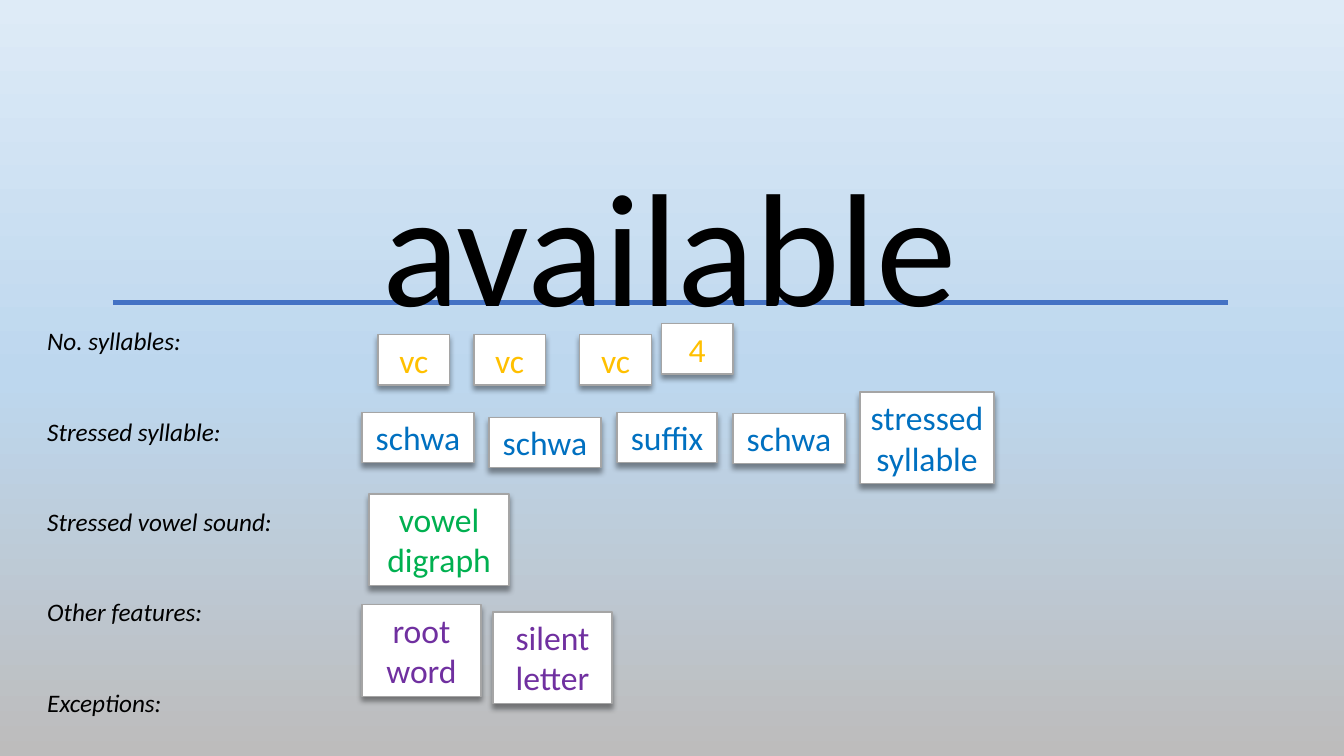
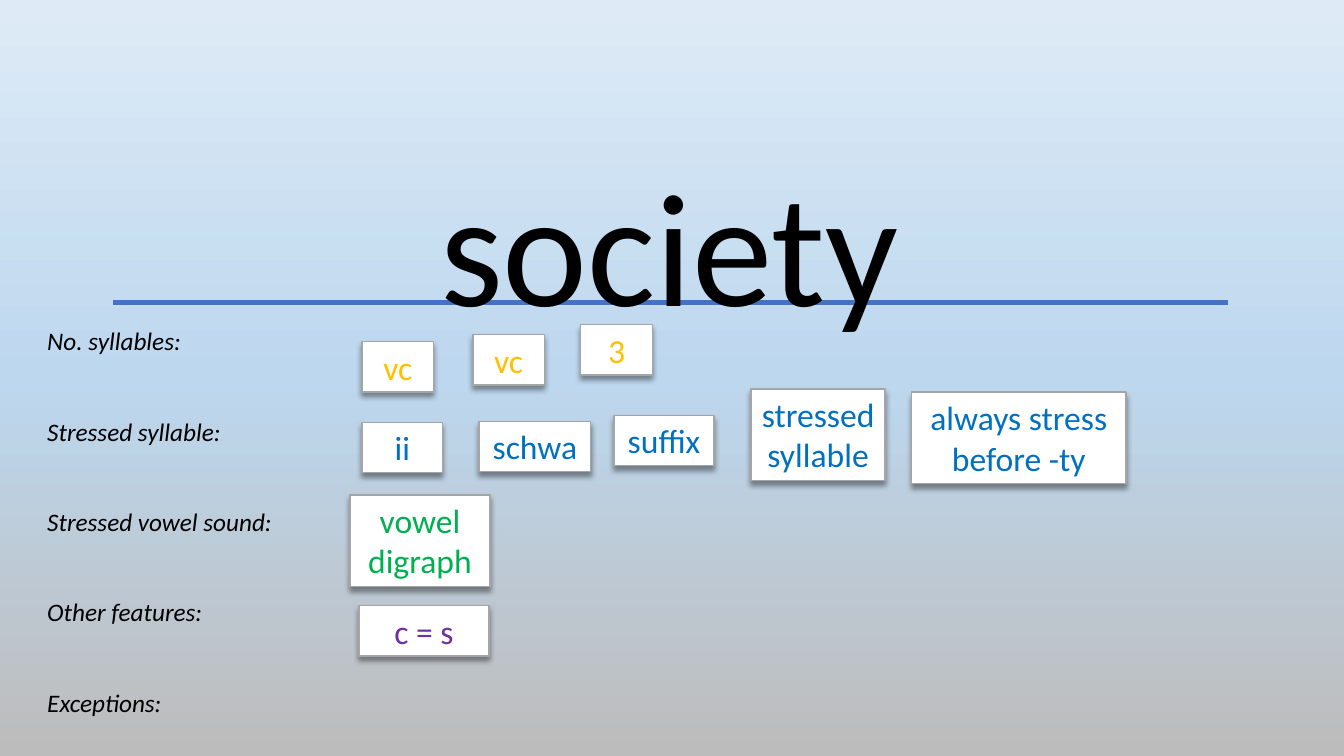
import copy

import pptx
import pptx.dml.color
import pptx.enum.shapes
import pptx.enum.text
import pptx.oxml
import pptx.oxml.ns
import pptx.util

Inches = pptx.util.Inches
Pt = pptx.util.Pt
qn = pptx.oxml.ns.qn
ALIGN = pptx.enum.text.PP_ALIGN
ANCHOR = pptx.enum.text.MSO_ANCHOR
AUTO_SIZE = pptx.enum.text.MSO_AUTO_SIZE

FONT = "Calibri"
BLACK, WHITE = "000000", "FFFFFF"
GREY, BLUE = "A5A5A5", "4472C4"
BACKGROUND = [(0, "DEEBF7"), (0.5, "BDD7EE"), (1, "BDBCBC")]
COUNT, STRESS, VOWEL, FEATURE = "FFC000", "0070C0", "00B050", "7030A0"
LABELS = ["No. syllables:", "Stressed syllable:", "Stressed vowel sound:",
          "Other features:", "Exceptions:"]

LOW, TALL = 0.5, 0.91
CARD_SIZES = {
    "vc": (0.71, LOW), "3": (0.71, LOW), "4": (0.71, LOW),
    "ii": (0.8, LOW), "schwa": (1.11, LOW), "suffix": (0.99, LOW),
    "c = s": (1.29, LOW),
    "stressed\nsyllable": (1.33, TALL), "vowel\ndigraph": (1.39, TALL),
    "root\nword": (1.18, TALL), "silent\nletter": (1.18, TALL),
    "always stress before -ty": (2.13, TALL),
}

SHADOW = (
    '<a:outerShdw xmlns:a="http://schemas.openxmlformats.org/drawingml/2006/main" '
    'blurRad="50800" dist="38100" dir="5400000" algn="t" rotWithShape="0">'
    '<a:srgbClr val="000000"><a:alpha val="40000"/></a:srgbClr></a:outerShdw>'
)

WORDS = {
    "available": [
        (COUNT, [("vc", 3.75, 3.32), ("vc", 4.7, 3.32), ("vc", 5.75, 3.32),
                 ("4", 6.56, 3.21)]),
        (STRESS, [("schwa", 3.59, 4.09), ("schwa", 4.85, 4.14),
                  ("suffix", 6.12, 4.09), ("schwa", 7.27, 4.1),
                  ("stressed\nsyllable", 8.53, 3.89)]),
        (VOWEL, [("vowel\ndigraph", 3.66, 4.9)]),
        (FEATURE, [("root\nword", 3.59, 6), ("silent\nletter", 4.89, 6.07)]),
    ],
    "society": [
        (COUNT, [("vc", 3.59, 3.39), ("vc", 4.69, 3.32), ("3", 5.76, 3.22)]),
        (STRESS, [("ii", 3.59, 4.19), ("schwa", 4.75, 4.18),
                  ("suffix", 6.09, 4.12), ("stressed\nsyllable", 7.45, 3.86),
                  ("always stress before -ty", 9.04, 3.89)]),
        (VOWEL, [("vowel\ndigraph", 3.47, 4.91)]),
        (FEATURE, [("c = s", 3.56, 6.01)]),
    ],
}


def rgb(value):
    return pptx.dml.color.RGBColor.from_string(value)


def set_attrs(obj, values):
    for name, value in values.items():
        setattr(obj, name, value)


def write_text(sp, text, size, color, align, gap=0, italic=False):
    tf = sp.text_frame
    tf.text = text
    set_attrs(tf, {"word_wrap": True, "vertical_anchor": ANCHOR.TOP,
                   "auto_size": AUTO_SIZE.SHAPE_TO_FIT_TEXT})
    for i, p in enumerate(tf.paragraphs):
        set_attrs(p, {"alignment": align, "space_before": Pt(gap if i else 0)})
        for r in p.runs:
            set_attrs(r.font, {"name": FONT, "size": Pt(size), "italic": italic})
            r.font.color.rgb = rgb(color)


def set_background(master):
    fill = master.background.fill
    fill.gradient()
    fill.gradient_angle = 270
    stops = master.element.find(".//" + qn("p:bg")).find(".//" + qn("a:gsLst"))
    stops.append(copy.deepcopy(stops[0]))
    for stop, (position, color) in zip(fill.gradient_stops, BACKGROUND):
        stop.position = position
        stop.color.rgb = rgb(color)


def set_title(slide, word):
    sp = slide.shapes.title
    set_attrs(sp, {"left": Inches(1.72), "top": Inches(1.39),
                   "width": Inches(9.84), "height": Inches(2.04)})
    write_text(sp, word, 115, BLACK, ALIGN.CENTER)


def add_rule(slide):
    line = slide.shapes.add_connector(
        pptx.enum.shapes.MSO_CONNECTOR.STRAIGHT,
        Inches(1.12), Inches(3), Inches(12.18), Inches(3))
    line.line.color.rgb = rgb(BLUE)
    line.line.width = Pt(3)
    sp_pr = line.element.find(qn("p:spPr"))
    sp_pr.append(pptx.oxml.ns.nsdecls and sp_pr.makeelement(qn("a:effectLst")))
    slide.shapes.title.element.addprevious(line.element)


def add_labels(slide):
    sp = slide.shapes.add_textbox(Inches(0.37), Inches(3.18),
                                  Inches(2.45), Inches(4.04))
    write_text(sp, "\n".join(LABELS), 18, BLACK, ALIGN.LEFT, gap=43, italic=True)


def add_card(slide, text, left, top, color):
    width, height = CARD_SIZES[text]
    sp = slide.shapes.add_shape(
        pptx.enum.shapes.MSO_SHAPE.RECTANGLE,
        Inches(left), Inches(top), Inches(width), Inches(height))
    sp.fill.solid()
    sp.fill.fore_color.rgb = rgb(WHITE)
    sp.line.color.rgb = rgb(GREY)
    sp.line.width = Pt(1)
    sp.shadow.inherit = False
    effects = sp.element.find(".//" + qn("a:effectLst"))
    effects.append(pptx.oxml.parse_xml(SHADOW))
    write_text(sp, text, 24, color, ALIGN.CENTER)


def add_word_slide(prs, word, groups):
    slide = prs.slides.add_slide(prs.slide_layouts[5])
    set_title(slide, word)
    add_rule(slide)
    add_labels(slide)
    for color, cards in groups:
        for text, left, top in cards:
            add_card(slide, text, left, top, color)


def main():
    prs = pptx.Presentation()
    prs.slide_width = Inches(13.33)
    prs.slide_height = Inches(7.5)
    set_background(prs.slide_master)
    for word, groups in WORDS.items():
        add_word_slide(prs, word, groups)
    prs.save("out.pptx")


if __name__ == "__main__":
    main()
